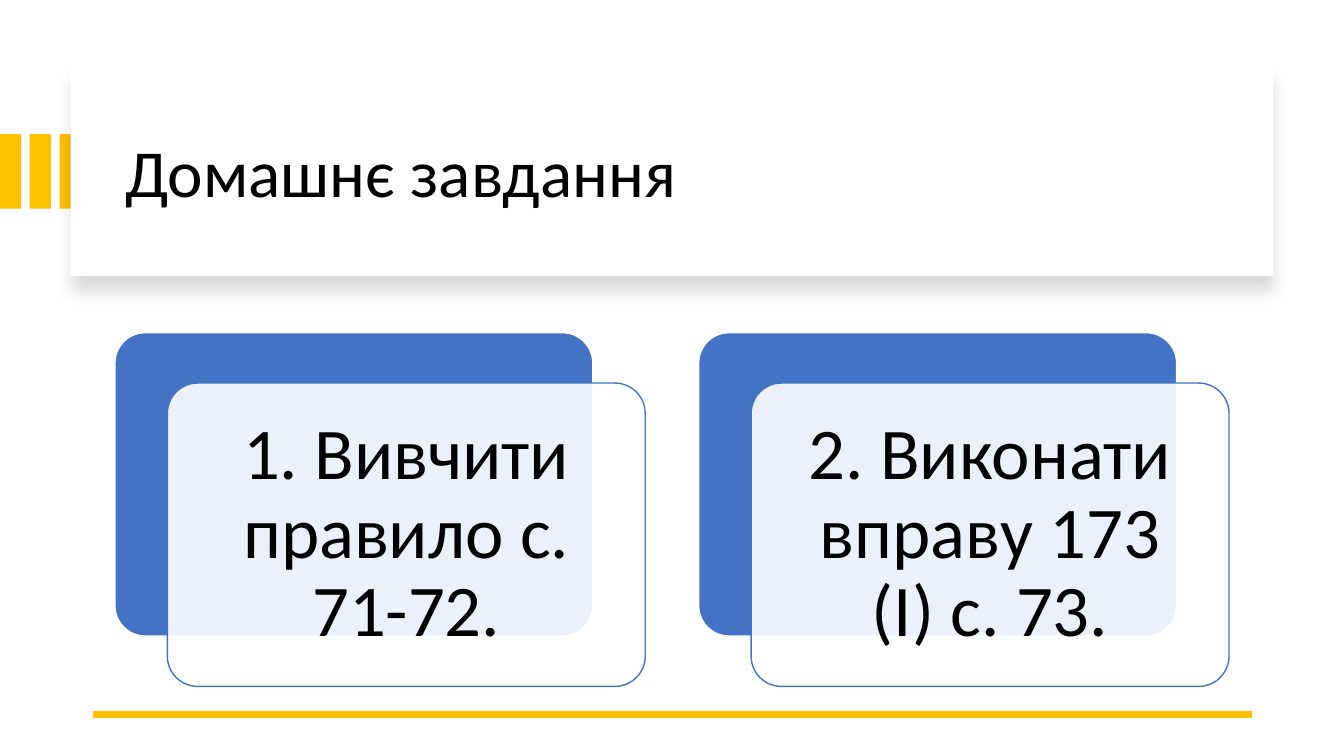
"""Build the homework slide with a title banner and two task cards."""
from lxml import etree
from pptx import Presentation
from pptx.dml.color import RGBColor
from pptx.enum.shapes import MSO_CONNECTOR, MSO_SHAPE
from pptx.enum.text import MSO_ANCHOR, MSO_AUTO_SIZE, PP_ALIGN
from pptx.oxml import parse_xml
from pptx.oxml.ns import nsdecls, qn
from pptx.util import Inches, Pt

AMBER = RGBColor(0xFF, 0xC0, 0x00)
BLUE = RGBColor(0x44, 0x72, 0xC4)
WHITE = RGBColor(0xFF, 0xFF, 0xFF)
BLACK = RGBColor(0x00, 0x00, 0x00)
TASKS = ["1. Вивчити правило с. 71-72.", "2. Виконати вправу 173 (І) с. 73."]

deck = Presentation()
deck.slide_width, deck.slide_height = Inches(13.33), Inches(7.5)
slide = deck.slides.add_slide(deck.slide_layouts[5])


def add_block(preset, left, top, width, height, fill, line=None):
    block = slide.shapes.add_shape(
        preset, Inches(left), Inches(top), Inches(width), Inches(height))
    block.shadow.inherit = False
    block.fill.solid()
    block.fill.fore_color.rgb = fill
    if line is None:
        block.line.fill.background()
    else:
        block.line.color.rgb = line
        block.line.width = Pt(1)
        block.adjustments[0] = 0.1
    return block


def write(holder, text, size, align, inset_x=0.1, inset_y=0.05):
    frame = holder.text_frame
    frame.word_wrap = True
    frame.auto_size = MSO_AUTO_SIZE.NONE
    frame.vertical_anchor = MSO_ANCHOR.MIDDLE
    frame.margin_left = frame.margin_right = Inches(inset_x)
    frame.margin_top = frame.margin_bottom = Inches(inset_y)
    paragraph = frame.paragraphs[0]
    paragraph.alignment = align
    paragraph.line_spacing = 0.9
    run = paragraph.add_run()
    run.text = text
    run.font.size = Pt(size)
    run.font.name = "Calibri"
    run.font.color.rgb = BLACK


stripe_pitch = 0.295
for index in range(3):
    add_block(MSO_SHAPE.RECTANGLE, index * stripe_pitch, 1.33, 0.21, 0.74, AMBER)

banner = add_block(MSO_SHAPE.RECTANGLE, 0.7, 0.67, 11.93, 2.07, WHITE)
banner_effects = banner.element.spPr.find(qn("a:effectLst"))
banner_effects.append(parse_xml(
    f'<a:outerShdw {nsdecls("a")} blurRad="{Pt(11)}" dist="{Pt(10)}" dir="5400000" '
    'algn="t" rotWithShape="0"><a:srgbClr val="000000"><a:alpha val="15000"/>'
    '</a:srgbClr></a:outerShdw>'))

heading = slide.shapes.title
heading.left, heading.top = Inches(1.14), Inches(0.89)
heading.width, heading.height = Inches(11.13), Inches(1.7)
write(heading, "Домашнє завдання", size=48, align=PP_ALIGN.LEFT)
banner.element.addnext(heading.element)

footer_rule = slide.shapes.add_connector(
    MSO_CONNECTOR.STRAIGHT, Inches(12.42), Inches(7.09), Inches(0.92), Inches(7.09))
footer_rule.line.color.rgb = AMBER
footer_rule.line.width = Pt(4.5)
etree.SubElement(footer_rule.element.spPr, qn("a:effectLst"))

card_left, card_top, card_width, card_height = 1.14, 3.3, 4.74, 3.01
card_pitch, offset_x, offset_y = 5.79, 0.52, 0.5
for index, task in enumerate(TASKS):
    left = card_left + index * card_pitch
    add_block(MSO_SHAPE.ROUNDED_RECTANGLE, left, card_top,
              card_width, card_height, BLUE, line=WHITE)
    card = add_block(MSO_SHAPE.ROUNDED_RECTANGLE, left + offset_x, card_top + offset_y,
                     card_width, card_height, WHITE, line=BLUE)
    card_color = card.element.spPr.find(qn("a:solidFill"))[0]
    etree.SubElement(card_color, qn("a:alpha"), val="90000")
    write(card, task, size=52, align=PP_ALIGN.CENTER, inset_x=0.22, inset_y=0.22)

deck.save("out.pptx")
